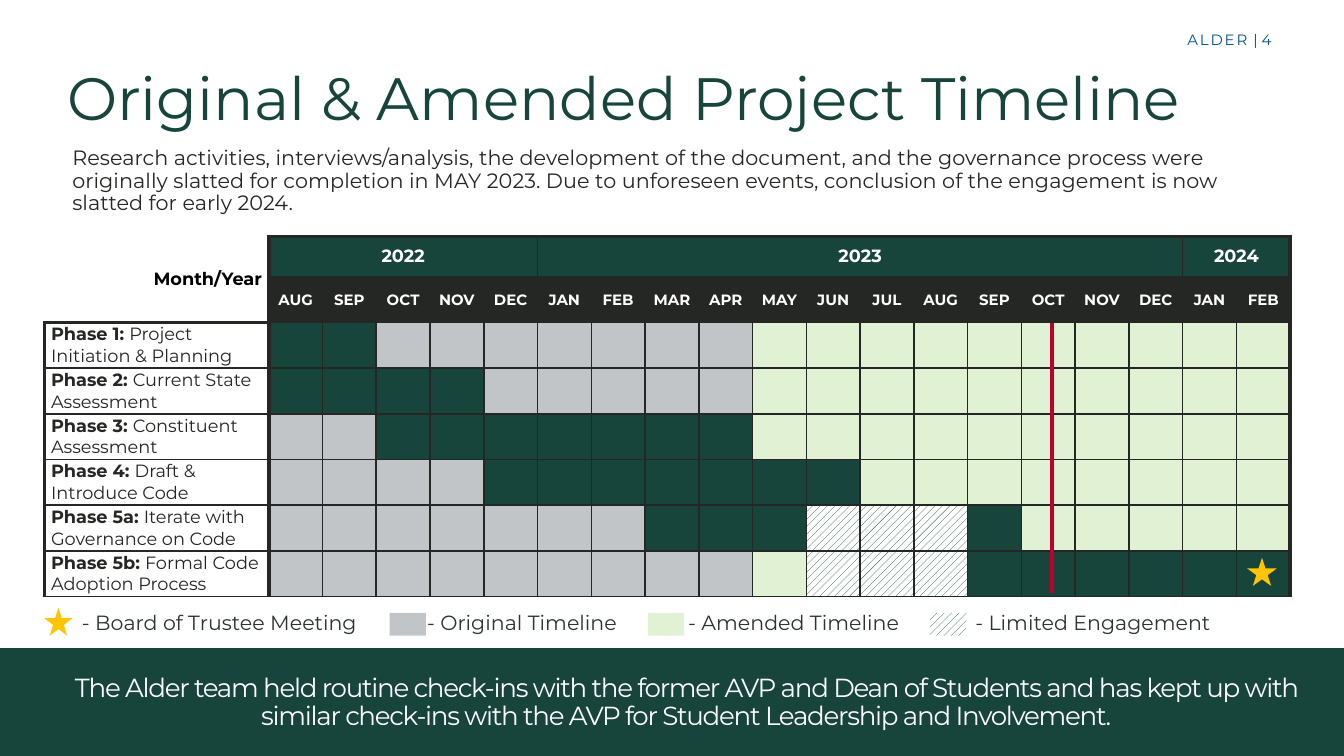
from dataclasses import dataclass
from typing import Optional

from lxml.etree import SubElement
from pptx import Presentation
from pptx.dml.color import RGBColor
from pptx.dml.fill import FillFormat
from pptx.enum.dml import MSO_PATTERN
from pptx.enum.shapes import MSO_CONNECTOR, MSO_SHAPE
from pptx.enum.text import MSO_ANCHOR, MSO_AUTO_SIZE, PP_ALIGN
from pptx.oxml.ns import qn
from pptx.shapes.autoshape import Shape
from pptx.table import _Cell
from pptx.text.text import TextFrame, _Paragraph, _Run
from pptx.util import Inches, Pt


@dataclass(frozen=True)
class Theme:
    font: str = "Montserrat"
    green: str = "18453B"
    gray: str = "C1C5C8"
    pale: str = "E1F1D4"
    dark: str = "242724"
    slate: str = "2E3234"
    blue: str = "00548B"
    red: str = "BF002D"
    gold: str = "FFC500"
    white: str = "FFFFFF"
    black: str = "000000"
    title: float = 32
    band: float = 14
    intro: float = 11.1
    legend: float = 11
    label: float = 9.5
    small: float = 8
    thin: float = 1
    thick: float = 2.25


@dataclass(frozen=True)
class Phase:
    name: str
    task: str
    plan: str  # P planned work, O original, A amended, L limited


@dataclass(frozen=True)
class Mark:
    kind: MSO_SHAPE
    left: float
    top: float
    width: float
    height: float
    fill: str


T = Theme()
HATCH = "hatch"
FILLS = {"P": T.green, "O": T.gray, "A": T.pale, "L": HATCH}
YEARS = [("2022", 5), ("2023", 12), ("2024", 2)]
MONTHS = ("AUG SEP OCT NOV DEC JAN FEB MAR APR MAY JUN JUL "
          "AUG SEP OCT NOV DEC JAN FEB").split()
PHASES = [
    Phase("Phase 1: ", "Project Initiation & Planning", "PPOOOOOOOAAAAAAAAAA"),
    Phase("Phase 2: ", "Current State Assessment", "PPPPOOOOOAAAAAAAAAA"),
    Phase("Phase 3: ", "Constituent Assessment", "OOPPPPPPPAAAAAAAAAA"),
    Phase("Phase 4: ", "Draft & Introduce Code", "OOOOPPPPPPPAAAAAAAA"),
    Phase("Phase 5a: ", "Iterate with Governance on Code", "OOOOOOOPPPLLLPAAAAA"),
    Phase("Phase 5b: ", "Formal Code Adoption Process", "OOOOOOOOOALLLPPPPPP"),
]
MARKS = [
    Mark(MSO_SHAPE.STAR_5_POINT, 9.28, 4.15, 0.22, 0.21, T.gold),
    Mark(MSO_SHAPE.STAR_5_POINT, 0.33, 4.52, 0.21, 0.21, T.gold),
    Mark(MSO_SHAPE.RECTANGLE, 2.9, 4.56, 0.27, 0.17, T.gray),
    Mark(MSO_SHAPE.RECTANGLE, 4.82, 4.56, 0.27, 0.17, T.pale),
    Mark(MSO_SHAPE.RECTANGLE, 6.92, 4.56, 0.27, 0.17, HATCH),
]
# Each later label, with the letter spacing that widens the space before it
FIRST = "- Board of Trustee Meeting"
LABELS = [("- Original Timeline", 34.6), ("- Amended Timeline", 35.1),
          ("- Limited Engagement", 37.8)]


def rgb(code: str) -> RGBColor:
    return RGBColor.from_string(code)


def paint(fill: FillFormat, code: Optional[str]) -> None:
    if code is None:
        fill.background()
    elif code == HATCH:
        fill.patterned()
        fill.pattern = MSO_PATTERN.WIDE_UPWARD_DIAGONAL
        fill.fore_color.rgb = rgb(T.green)
        fill.back_color.rgb = rgb(T.white)
    else:
        fill.solid()
        fill.fore_color.rgb = rgb(code)


def style(run: _Run, size: float, code: str, bold: bool = False, gap: float = 0) -> None:
    font = run.font
    font.name, font.size, font.bold = T.font, Pt(size), bold
    font.color.rgb = rgb(code)
    if gap:
        font._element.set("spc", str(round(gap * 100)))


def write(frame: TextFrame, text: str, size: float, code: str,
          align: PP_ALIGN = PP_ALIGN.LEFT, bold: bool = False, gap: float = 0) -> _Paragraph:
    frame.text = text
    frame.word_wrap = True
    para = frame.paragraphs[0]
    para.alignment = align
    style(para.runs[0], size, code, bold, gap)
    return para


def extend(para: _Paragraph, text: str, size: float, code: str, gap: float = 0) -> None:
    run = para.add_run()
    run.text = text
    style(run, size, code, gap=gap)


def place(shape: Shape, left: float, top: float, width: float, height: float) -> None:
    shape.left, shape.top = Inches(left), Inches(top)
    shape.width, shape.height = Inches(width), Inches(height)


def inset(item: TextFrame | _Cell, left: float, top: float, right: float, base: float) -> None:
    item.margin_left, item.margin_top = Inches(left), Inches(top)
    item.margin_right, item.margin_bottom = Inches(right), Inches(base)


def edge(cell: _Cell, row: int, col: int) -> None:
    """Heavy rules around the month grid and the phase names."""
    corner = col == 0 and row < 2
    last = len(MONTHS)
    final = last - YEARS[-1][1] + 1 if row == 0 else last
    heavy = {"lnL": col < 2, "lnR": col in (0, final, last),
             "lnT": row == 0 or (row == 2 and col == 0), "lnB": corner}
    props = cell._tc.get_or_add_tcPr()
    for tag, bold in heavy.items():
        line = SubElement(props, qn(f"a:{tag}"), w=str(Pt(T.thick if bold else T.thin)))
        if corner and tag in ("lnL", "lnT"):
            SubElement(line, qn("a:noFill"))
        else:
            SubElement(SubElement(line, qn("a:solidFill")), qn("a:srgbClr"), val=T.dark)


def draw_grid(shapes) -> None:
    rows, cols = len(PHASES) + 2, len(MONTHS) + 1
    table = shapes.add_table(rows, cols, Inches(0.33), Inches(1.76),
                             Inches(9.27), Inches(2.68)).table
    table.first_row = table.horz_banding = False
    for col in range(cols):
        table.columns[col].width = Inches(0.4 if col else 1.67)
    for row in range(rows):
        table.rows[row].height = Inches(0.34 if row else 0.3)
        for col in range(cols):
            cell = table.cell(row, col)
            inset(cell, 0.05, 0.01, 0.05, 0.01)
            cell.vertical_anchor = MSO_ANCHOR.MIDDLE
            edge(cell, row, col)
            if col == 0:
                paint(cell.fill, None)
            elif row < 2:
                paint(cell.fill, T.dark if row else T.green)
            else:
                paint(cell.fill, FILLS[PHASES[row - 2].plan[col - 1]])

    # Headings
    head = table.cell(0, 0)
    head.merge(table.cell(1, 0))
    write(head.text_frame, "Month/Year", T.label, T.black, PP_ALIGN.RIGHT, True)
    col = 1
    for year, span in YEARS:
        cell = table.cell(0, col)
        cell.merge(table.cell(0, col + span - 1))
        write(cell.text_frame, year, T.label, T.white, PP_ALIGN.CENTER, True)
        col += span
    for col, month in enumerate(MONTHS, 1):
        write(table.cell(1, col).text_frame, month, T.small, T.white, PP_ALIGN.CENTER, True)

    # Phase names
    for row, phase in enumerate(PHASES, 2):
        para = write(table.cell(row, 0).text_frame, phase.name, T.label, T.dark, bold=True)
        extend(para, phase.task, T.label, T.dark)


def draw_mark(shapes, mark: Mark) -> Shape:
    shape = shapes.add_shape(mark.kind, Inches(mark.left), Inches(mark.top),
                             Inches(mark.width), Inches(mark.height))
    shape.shadow.inherit = False
    paint(shape.fill, mark.fill)
    shape.line.fill.background()
    return shape


def draw_legend(body: Shape) -> None:
    place(body, 0.33, 4.42, 9.27, 0.53)
    frame = body.text_frame
    para = write(frame, FIRST, T.legend, T.slate)
    for label, gap in LABELS:
        extend(para, " ", T.legend, T.slate, gap)
        extend(para, label, T.legend, T.slate)
    frame.auto_size = MSO_AUTO_SIZE.NONE
    inset(frame, 0.28, 0.1, 0.05, 0.1)
    para.line_spacing, para.space_before = 1.1, Pt(5)
    props = para._p.get_or_add_pPr()
    props.set("marL", "0")
    props.set("indent", "0")
    SubElement(props, qn("a:buNone"))


def main() -> None:
    deck = Presentation()
    deck.slide_width = Inches(10)
    deck.slide_height = deck.slide_width * 9 // 16
    slide = deck.slides.add_slide(deck.slide_layouts[1])
    shapes = slide.shapes

    # Page label
    box = shapes.add_textbox(Inches(7.65), Inches(0.18), Inches(1.91), Inches(0.24))
    para = write(box.text_frame, "ALDER", T.small, T.blue, PP_ALIGN.RIGHT, gap=1)
    extend(para, " | 4", T.small, T.blue)

    # Title
    place(shapes.title, 0.5, 0.45, 9, 0.72)
    frame = shapes.title.text_frame
    write(frame, "Original & Amended Project Timeline", T.title, T.green)
    frame.auto_size = MSO_AUTO_SIZE.NONE
    frame.vertical_anchor = MSO_ANCHOR.TOP
    inset(frame, 0, 0, 0, 0)

    # Introduction
    box = shapes.add_textbox(Inches(0.44), Inches(1), Inches(9), Inches(0.72))
    para = write(box.text_frame,
                 "Research activities, interviews/analysis, the development of the document, "
                 "and the governance process were originally slatted for completion in MAY 2023. "
                 "Due to unforeseen events, conclusion of the engagement is now slatted for "
                 "early 2024.", T.intro, T.dark)
    inset(box.text_frame, 0.1, 0.1, 0.05, 0.1)
    para.line_spacing, para.space_before, para.space_after = 0.9, Pt(5), Pt(12)

    # Timeline, with the line for today
    draw_grid(shapes)
    today = shapes.add_connector(MSO_CONNECTOR.STRAIGHT, Inches(7.83), Inches(2.4),
                                 Inches(7.83), Inches(4.41))
    today.line.color.rgb = rgb(T.red)
    today.line.width = Pt(T.thick)
    SubElement(today._element.spPr, qn("a:effectLst"))

    # Legend
    draw_legend(slide.placeholders[1])
    for mark in MARKS:
        draw_mark(shapes, mark)

    # Closing band
    band = draw_mark(shapes, Mark(MSO_SHAPE.RECTANGLE, 0, 4.83, 10, 0.8, T.green))
    band.line.color.rgb = rgb(T.green)
    band.line.width = Pt(0.75)
    para = write(band.text_frame,
                 "The Alder team held routine check-ins with the former AVP and Dean of "
                 "Students and has kept up with similar check-ins with the AVP for Student "
                 "Leadership and Involvement.", T.band, T.white, PP_ALIGN.CENTER, gap=-0.7)
    band.text_frame.vertical_anchor = MSO_ANCHOR.MIDDLE
    para.line_spacing, para.space_after = 0.9, Pt(6)
    para._p.get_or_add_pPr().set("marL", str(Inches(0.21)))

    deck.save("out.pptx")


if __name__ == "__main__":
    main()
